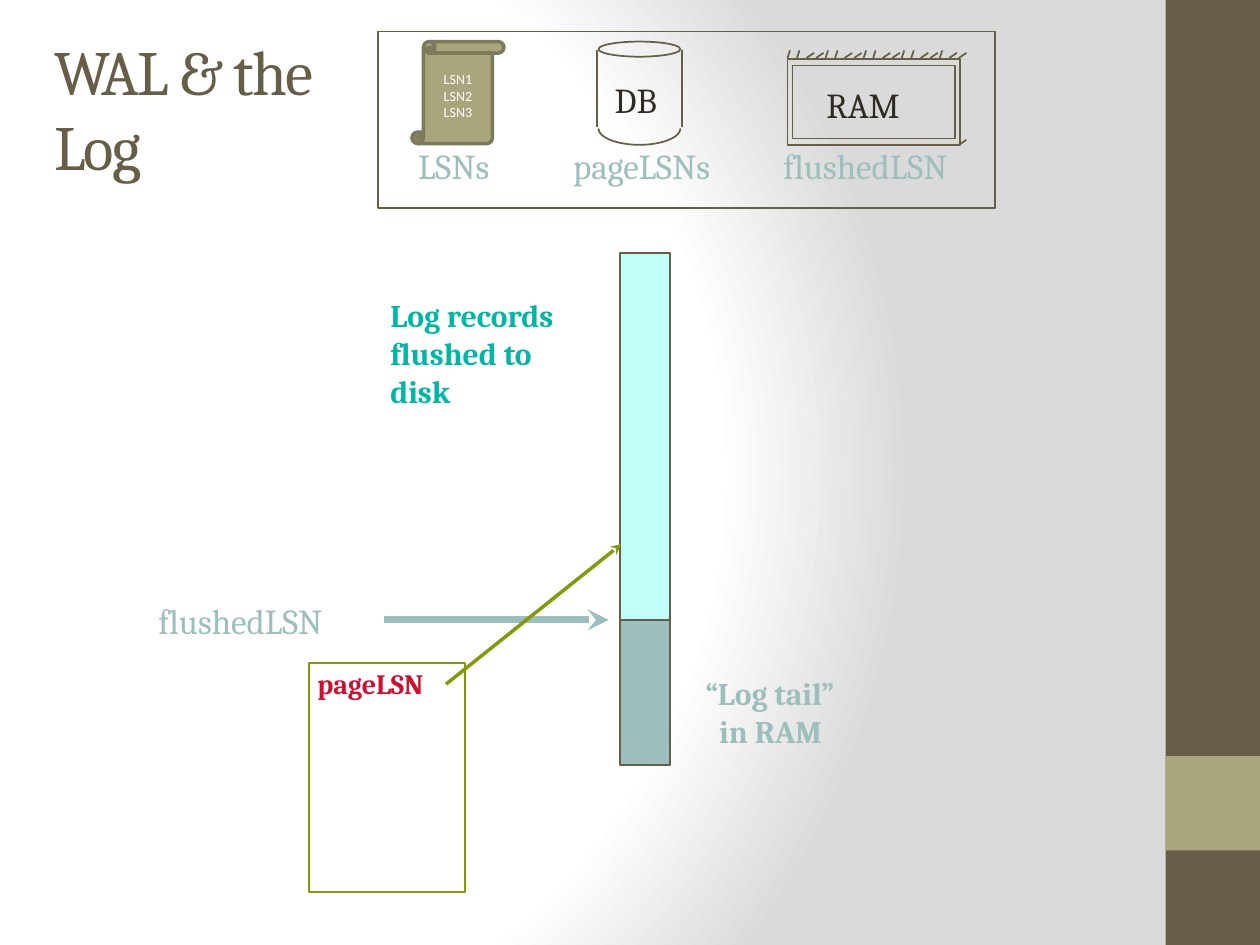
from dataclasses import dataclass
from math import cos, pi, sin

from pptx import Presentation
from pptx.dml.color import RGBColor
from pptx.enum.shapes import MSO_CONNECTOR, MSO_SHAPE
from pptx.enum.text import MSO_ANCHOR, MSO_AUTO_SIZE, PP_ALIGN
from pptx.oxml import parse_xml
from pptx.oxml.ns import nsdecls, qn
from pptx.oxml.xmlchemy import OxmlElement
from pptx.util import Inches, Pt


@dataclass(frozen=True)
class Theme:
    brown: str = "675E47"
    khaki: str = "A9A57C"
    dark_khaki: str = "7D7A5C"
    ink: str = "2F2B20"
    mist: str = "9CBEBD"
    aqua: str = "C0FEF9"
    teal: str = "00B7A5"
    olive: str = "849A0A"
    red: str = "CF0E30"
    white: str = "FFFFFF"
    gray: str = "DADADA"
    heading_font: str = "Cambria"
    small_font: str = "Calibri"
    title_size: int = 36
    label_size: int = 20
    note_size: int = 18
    page_size: int = 16
    scroll_size: int = 8


def write_text(frame, text, font, size, color, bold=False,
               align=PP_ALIGN.LEFT, anchor=MSO_ANCHOR.TOP, spacing=None):
    frame.word_wrap = True
    frame.auto_size = MSO_AUTO_SIZE.NONE
    frame.vertical_anchor = anchor
    frame.text = text
    for paragraph in frame.paragraphs:
        paragraph.alignment = align
        for run in paragraph.runs:
            run.font.name = font
            run.font.size = Pt(size)
            run.font.bold = bold
            run.font.color.rgb = RGBColor.from_string(color)
            if spacing is not None:
                run.font._element.set("spc", str(spacing))


class SlideBuilder:
    def __init__(self, slide, theme):
        self.slide = slide
        self.theme = theme

    def background(self):
        fill = self.slide.background.fill
        fill.gradient()
        stops = ((0, self.theme.white), (75, self.theme.white), (100, self.theme.gray))
        stop_xml = "".join(
            f'<a:gs pos="{position * 1000}"><a:srgbClr val="{color}"/></a:gs>'
            for position, color in stops)
        radial = parse_xml(
            f'<a:gradFill {nsdecls("a")} rotWithShape="1"><a:gsLst>{stop_xml}</a:gsLst>'
            '<a:path path="circle"><a:fillToRect l="20000" t="50000" r="100000" b="50000"/>'
            '</a:path></a:gradFill>')
        linear = self.slide._element.find(".//" + qn("a:gradFill"))
        linear.getparent().replace(linear, radial)

    def title(self, text, left, top, width, height):
        title = self.slide.shapes.title
        title.left, title.top = Inches(left), Inches(top)
        title.width, title.height = Inches(width), Inches(height)
        write_text(title.text_frame, text, self.theme.heading_font, self.theme.title_size,
                   self.theme.brown, anchor=MSO_ANCHOR.MIDDLE, spacing=-100)

    def style(self, shape, fill=None, line=None, weight=1):
        shape.shadow.inherit = False
        if fill:
            shape.fill.solid()
            shape.fill.fore_color.rgb = RGBColor.from_string(fill)
        else:
            shape.fill.background()
        if line:
            shape.line.color.rgb = RGBColor.from_string(line)
            shape.line.width = Pt(weight)
        else:
            shape.line.fill.background()

    def shape(self, left, top, width, height, kind=MSO_SHAPE.RECTANGLE, **look):
        shape = self.slide.shapes.add_shape(
            kind, Inches(left), Inches(top), Inches(width), Inches(height))
        self.style(shape, **look)
        return shape

    def label(self, text, left, top, width, height=0.43, color=None, size=None, bold=False):
        box = self.slide.shapes.add_textbox(
            Inches(left), Inches(top), Inches(width), Inches(height))
        write_text(box.text_frame, text, self.theme.heading_font,
                   size or self.theme.label_size, color or self.theme.mist, bold=bold)
        return box

    def line(self, x1, y1, x2, y2, color=None, weight=1, arrow=False):
        connector = self.slide.shapes.add_connector(
            MSO_CONNECTOR.STRAIGHT, Inches(x1), Inches(y1), Inches(x2), Inches(y2))
        connector.line.color.rgb = RGBColor.from_string(color or self.theme.brown)
        connector.line.width = Pt(weight)
        if arrow:
            head = OxmlElement("a:tailEnd")
            head.set("type", "stealth")
            connector.line._get_or_add_ln().append(head)
        connector._element.spPr.append(OxmlElement("a:effectLst"))

    def half_ellipse(self, left, top, width, height, steps=24):
        radius = width / 2
        points = [(Inches(left + radius + radius * cos(pi * step / steps)),
                   Inches(top + height * sin(pi * step / steps)))
                  for step in range(steps + 1)]
        outline = self.slide.shapes.build_freeform(*points[0])
        outline.add_line_segments(points[1:], close=False)
        self.style(outline.convert_to_shape(), line=self.theme.brown)


def main():
    presentation = Presentation()
    presentation.slide_width, presentation.slide_height = Inches(10), Inches(7.5)
    theme = Theme()
    builder = SlideBuilder(
        presentation.slides.add_slide(presentation.slide_layouts[5]), theme)

    # Background, side band and title
    builder.background()
    builder.shape(9.25, 0, 0.75, 7.5, fill=theme.brown)
    builder.shape(9.25, 6, 0.75, 0.75, fill=theme.khaki)
    builder.title("WAL & the Log", 0.33, 0.25, 2.25, 1.21)

    # Legend frame and captions
    builder.shape(3, 0.25, 4.9, 1.4, line=theme.brown)
    for caption, left, width in (
            ("LSNs", 3.22, 0.86), ("pageLSNs", 4.45, 1.46), ("flushedLSN", 6.12, 1.67)):
        builder.label(caption, left, 1.1, width)

    # Database cylinder
    builder.shape(4.75, 0.33, 0.65, 0.12, kind=MSO_SHAPE.OVAL, line=theme.brown)
    for side in (4.74, 5.41):
        builder.line(side, 0.4, side, 1.01)
    builder.half_ellipse(4.75, 1.02, 0.65, 0.13)
    builder.label("DB", 4.78, 0.57, 0.58, color=theme.ink)

    # Memory chip: two frames and a row of pins, in pairs of steep and flat strokes
    builder.shape(6.25, 0.47, 1.37, 0.68, line=theme.brown)
    builder.shape(6.29, 0.52, 1.29, 0.58, line=theme.brown)
    pin_count = 19
    pin_gap = 1.36 / (pin_count - 1)
    for pin in range(pin_count):
        x = 6.25 + pin * pin_gap
        steep = pin % 4 < 2 and pin < pin_count - 2
        run, rise = (0.02, 0.06) if steep else (0.06, 0.04)
        builder.line(x, 0.46, x + run, 0.46 - rise)
    builder.line(7.61, 1.15, 7.67, 1.11)
    builder.label("RAM", 6.46, 0.61, 0.86, color=theme.ink)

    # Log scroll
    scroll = builder.shape(3.27, 0.33, 0.73, 0.81, kind=MSO_SHAPE.VERTICAL_SCROLL,
                           fill=theme.khaki, line=theme.dark_khaki, weight=2)
    write_text(scroll.text_frame, "LSN1\nLSN2\nLSN3", theme.small_font, theme.scroll_size,
               theme.white, align=PP_ALIGN.CENTER, anchor=MSO_ANCHOR.MIDDLE)

    # Log bar: flushed part above, tail below
    builder.shape(4.92, 2.01, 0.4, 2.91, fill=theme.aqua, line=theme.brown)
    builder.shape(4.92, 4.92, 0.4, 1.15, fill=theme.mist, line=theme.brown)
    builder.label("Log records\nflushed to disk", 3, 2.3, 1.77, 0.71,
                  color=theme.teal, size=theme.note_size, bold=True)
    tail = builder.label("“Log tail”\nin RAM", 5.5, 5.3, 1.43, 0.71,
                         size=theme.note_size, bold=True)
    tail.text_frame.paragraphs[1]._p.get_or_add_pPr().set("marL", str(Inches(0.11)))

    # Page and the pointers into the log
    builder.shape(2.45, 5.26, 1.24, 1.82, line=theme.olive)
    builder.label("pageLSN", 2.42, 5.24, 1.09, 0.38,
                  color=theme.red, size=theme.page_size, bold=True)
    builder.label("flushedLSN", 1.16, 4.71, 1.67)
    builder.line(3.05, 4.92, 4.83, 4.92, color=theme.mist, weight=4, arrow=True)
    builder.line(3.54, 5.43, 4.93, 4.32, color=theme.olive, weight=2, arrow=True)

    presentation.save("out.pptx")


if __name__ == "__main__":
    main()
